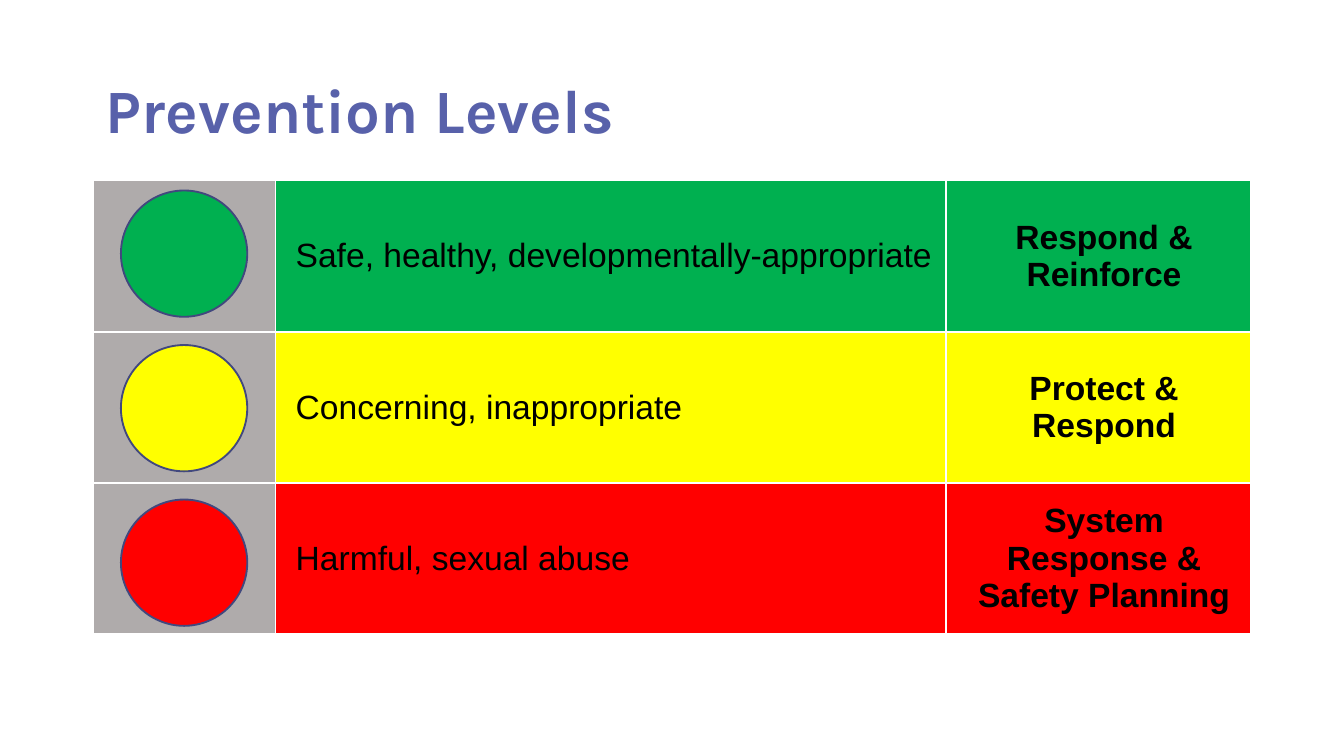
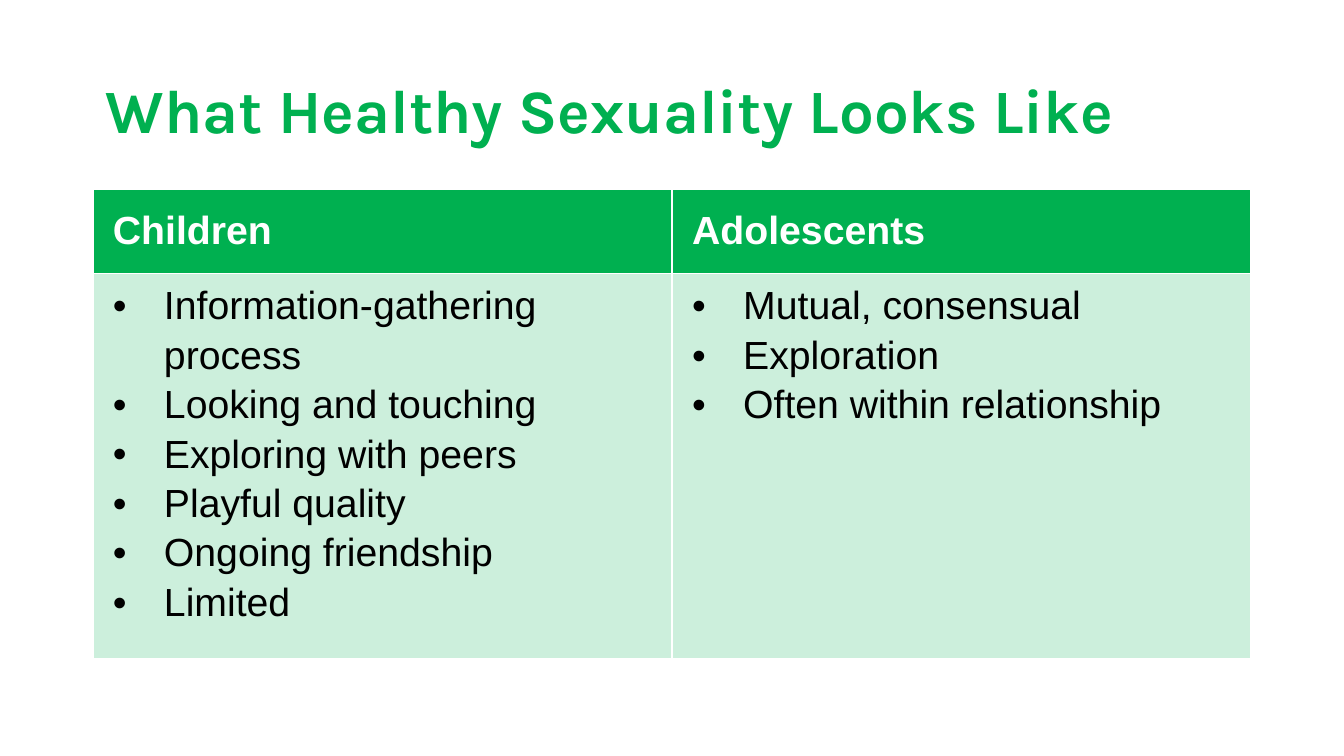
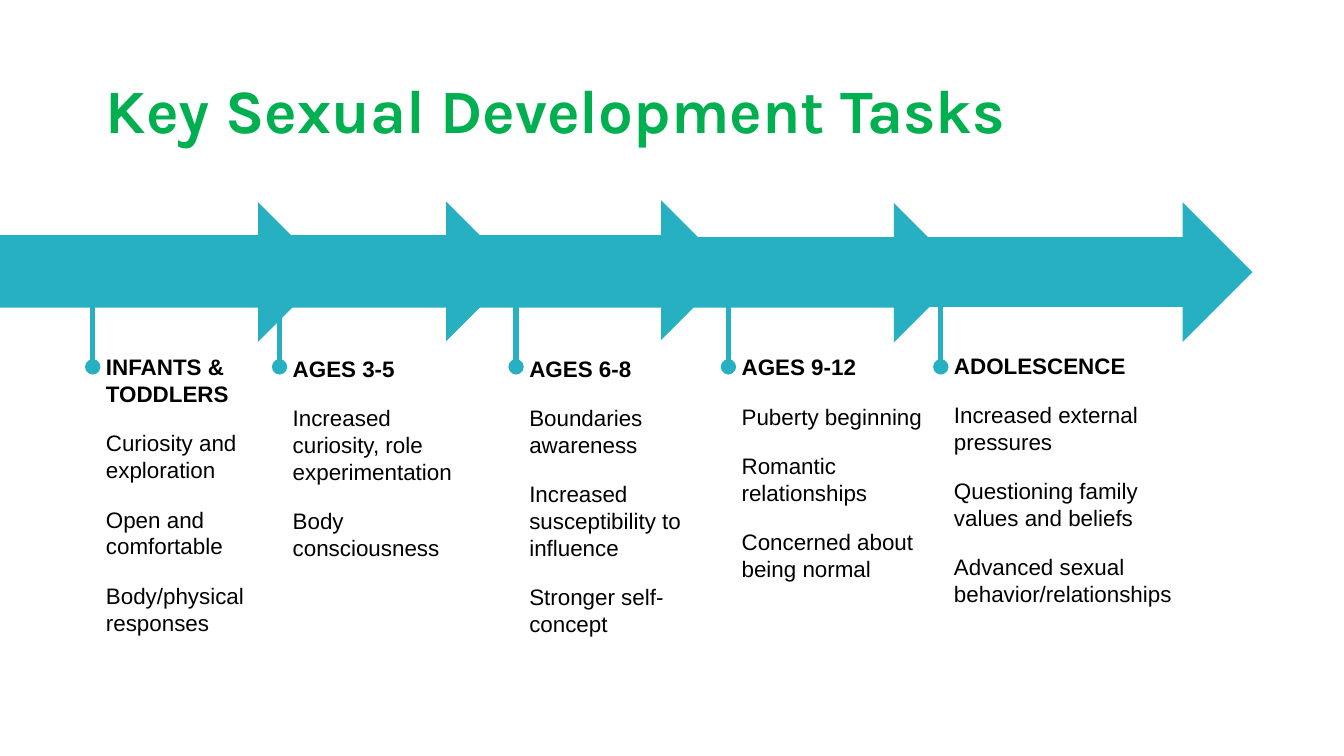
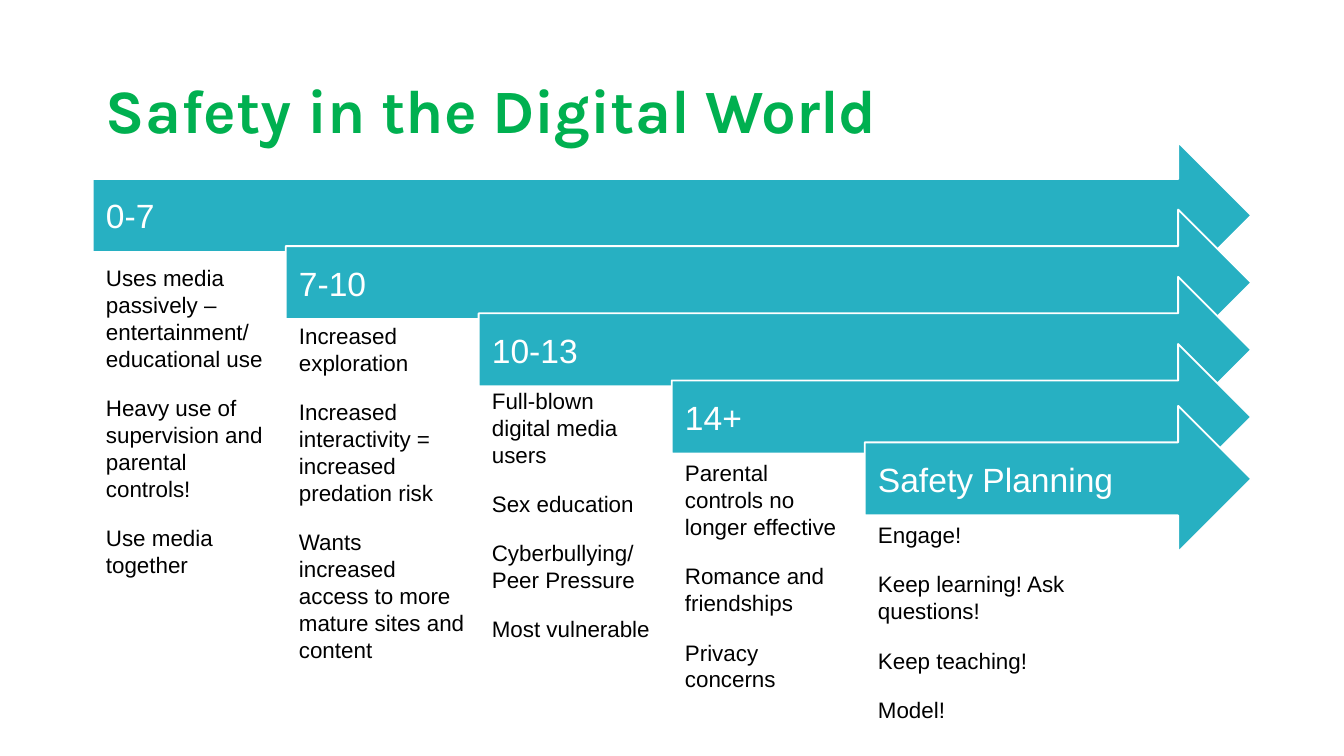
from copy import deepcopy
from dataclasses import dataclass
from typing import Any

from lxml.etree import SubElement
from pptx import Presentation
from pptx.dml.color import RGBColor
from pptx.enum.shapes import MSO_CONNECTOR as Connector, MSO_SHAPE as Preset
from pptx.enum.text import MSO_ANCHOR as Anchor, MSO_AUTO_SIZE as AutoSize, PP_ALIGN as Align
from pptx.oxml.ns import qn
from pptx.util import Inches, Pt

SLIDE_WIDTH, SLIDE_HEIGHT = Inches(10), Inches(5.625)
INDIGO, OUTLINE, TEAL = "5861AA", "41487E", "27B0C2"
GREEN, YELLOW, RED = "00B050", "FFFF00", "FF0000"
GREY, BLACK, WHITE = "AFABAB", "000000", "FFFFFF"
MARGIN, CONTENT_WIDTH, RIGHT_EDGE = 6.9, 86.2, 93.1


@dataclass(frozen=True)
class Box:
    """Place and size as percentages of the slide's width and height."""
    left: float
    top: float
    width: float
    height: float

    def emu(self) -> tuple[int, int, int, int]:
        """Return the box in slide units."""
        return across(self.left), down(self.top), across(self.width), down(self.height)


@dataclass(frozen=True)
class Style:
    """Look of the paragraphs in one text."""
    size: float
    color: str = BLACK
    bold: bool = False
    name: str = "Arial"
    align: Any = Align.LEFT
    spacing: float = 1.0
    after: float = 0
    bullet: bool = False


@dataclass(frozen=True)
class Level:
    """One prevention level."""
    color: str
    behavior: str
    response: str


@dataclass(frozen=True)
class Stage:
    """One age stage with its details and the arrow that ends it."""
    area: Box
    arrow: Box
    heading: str
    details: tuple[str, ...]


DETAIL = Style(12, after=12)
STAGE_HEADING = Style(12, bold=True, after=12)
LEVEL_TEXT = Style(18)
RESPONSE_TEXT = Style(18, bold=True, align=Align.CENTER)
AGE_TEXT = Style(18, WHITE)
GROUP_HEADING = Style(21, WHITE, bold=True)
GROUP_BULLET = Style(21, spacing=1.13, bullet=True)

LEVELS = (
    Level(GREEN, "Safe, healthy, developmentally-appropriate", "Respond & Reinforce"),
    Level(YELLOW, "Concerning, inappropriate", "Protect & Respond"),
    Level(RED, "Harmful, sexual abuse", "System Response & Safety Planning"),
)

HEALTHY_SIGNS = {
    "Children": ("Information-gathering process", "Looking and touching",
                 "Exploring with peers", "Playful quality", "Ongoing friendship", "Limited"),
    "Adolescents": ("Mutual, consensual", "Exploration", "Often within relationship"),
}

TASK_STAGES = (
    Stage(Box(6.9, 45.87, 16, 39.47), Box(-10.6, 26.75, 35, 18.49), "INFANTS & TODDLERS",
          ("Curiosity and exploration", "Open and comfortable", "Body/physical responses")),
    Stage(Box(20.8, 46.04, 14, 29.33), Box(-3.3, 26.67, 41.7, 18.49), "AGES 3-5",
          ("Increased curiosity, role experimentation", "Body consciousness")),
    Stage(Box(38.4, 46.04, 16, 39.47), Box(0, 26.49, 54.4, 18.49), "AGES 6-8",
          ("Boundaries awareness", "Increased susceptibility to influence",
           "Stronger self-concept")),
    Stage(Box(54.2, 45.87, 16, 32.36), Box(-0.5, 26.84, 72.2, 18.49), "AGES 9-12",
          ("Puberty beginning", "Romantic relationships", "Concerned about being normal")),
    Stage(Box(70, 45.69, 19.3, 35.91), Box(-0.5, 26.75, 93.7, 18.49), "ADOLESCENCE",
          ("Increased external pressures", "Questioning family values and beliefs",
           "Advanced sexual behavior/relationships")),
)


def digital_stage(step: int, arrow_top: float, area_top: float, area_height: float,
                  heading: str, details: tuple[str, ...], area_width: float = 14.3) -> Stage:
    """Place a digital safety stage on its step of the staircase."""
    left = MARGIN + 14.36 * step
    return Stage(Box(left, area_top, area_width, area_height),
                 Box(left, arrow_top, RIGHT_EDGE - left, 19.33), heading, details)


DIGITAL_STAGES = (
    digital_stage(0, 18.84, 34.13, 43.73, "0-7", (
        "Uses media passively – entertainment/\neducational use",
        "Heavy use of supervision and parental controls!", "Use media together")),
    digital_stage(1, 27.73, 41.78, 50.31, "7-10", (
        "Increased exploration", "Increased interactivity = increased predation risk",
        "Wants increased access to more mature sites and content")),
    digital_stage(2, 36.62, 50.31, 35.91, "10-13", (
        "Full-blown digital media users", "Sex education",
        "Cyberbullying/\nPeer Pressure", "Most vulnerable")),
    digital_stage(3, 45.51, 59.91, 32.89, "14+", (
        "Parental controls no longer effective", "Romance and friendships",
        "Privacy concerns")),
    digital_stage(4, 53.69, 68.09, 35.38, "Safety Planning", (
        "Engage!", "Keep learning! Ask questions!", "Keep teaching!", "Model!"), 18.2),
)


def across(share: float) -> int:
    """Turn a percentage of the slide's width into slide units."""
    return round(SLIDE_WIDTH * share / 100)


def down(share: float) -> int:
    """Turn a percentage of the slide's height into slide units."""
    return round(SLIDE_HEIGHT * share / 100)


def rgb(value: str) -> RGBColor:
    """Turn a hex string into a colour."""
    return RGBColor.from_string(value)


def assign(target: Any, values: dict[str, Any]) -> None:
    """Set attributes from a dict of format values."""
    for name, value in values.items():
        setattr(target, name, value)


def paint(target: Any, color: str, opacity: int = 100) -> None:
    """Fill a shape or cell with a solid colour."""
    target.fill.solid()
    target.fill.fore_color.rgb = rgb(color)
    if opacity < 100:
        tint = target.fill._xPr.find(f".//{qn('a:solidFill')}[last()]/{qn('a:srgbClr')}") \
            if target.fill._xPr.find(qn("a:solidFill")) is None \
            else target.fill._xPr.find(qn("a:solidFill")).find(qn("a:srgbClr"))
        SubElement(tint, qn("a:alpha"), val=str(opacity * 1000))


def write(frame: Any, lines: list[tuple[str, Style]]) -> None:
    """Write styled paragraphs into a text frame."""
    for index, (words, style) in enumerate(lines):
        paragraph = frame.add_paragraph() if index else frame.paragraphs[0]
        paragraph.text = words
        assign(paragraph, {"alignment": style.align, "line_spacing": style.spacing,
                           "space_after": Pt(style.after)})
        if style.bullet:
            properties = paragraph._p.get_or_add_pPr()
            properties.set("marL", str(across(3.8)))
            properties.set("indent", str(-across(3.8)))
            SubElement(properties, qn("a:buFont"), typeface="Arial")
            SubElement(properties, qn("a:buChar"), char="•")
        for run in paragraph.runs:
            assign(run.font, {"size": Pt(style.size), "bold": style.bold, "name": style.name})
            run.font.color.rgb = rgb(style.color)
        for line_break in paragraph._p.findall(qn("a:br")):
            line_break.append(deepcopy(paragraph.runs[0]._r.rPr))


def add_text(slide: Any, box: Box, lines: list[tuple[str, Style]], **frame_format: Any) -> None:
    """Add a wrapped text box."""
    frame = slide.shapes.add_textbox(*box.emu()).text_frame
    assign(frame, {"word_wrap": True, **frame_format})
    write(frame, lines)


def add_details(slide: Any, box: Box, lines: list[tuple[str, Style]]) -> None:
    """Add stage details in a box that grows with its text."""
    add_text(slide, box, lines, auto_size=AutoSize.SHAPE_TO_FIT_TEXT)


def add_preset(slide: Any, preset: Any, box: Box, color: str, outline: str = "") -> Any:
    """Add a filled preset shape, outlined when a line colour is given."""
    shape = slide.shapes.add_shape(preset, *box.emu())
    shape.shadow.inherit = False
    paint(shape, color)
    if outline:
        shape.line.color.rgb = rgb(outline)
        shape.line.width = Pt(1)
    else:
        shape.line.fill.background()
    return shape


def add_marker(slide: Any, left: float) -> None:
    """Add a timeline marker that ends in a dot."""
    marker = slide.shapes.add_connector(
        Connector.STRAIGHT, across(left), down(34.31), across(left), down(48.53))
    marker.line.color.rgb = rgb(TEAL)
    marker.line.width = Pt(2.75)
    SubElement(marker.line._get_or_add_ln(), qn("a:tailEnd"), type="oval")
    SubElement(marker._element.spPr, qn("a:effectLst"))


def add_grid(slide: Any, top: float, widths: list[float], heights: list[float]) -> Any:
    """Add a plain table with the given column and row shares."""
    box = Box(MARGIN, top, sum(widths), sum(heights))
    table = slide.shapes.add_table(len(heights), len(widths), *box.emu()).table
    assign(table, {"first_row": False, "horz_banding": False})
    for column, width in zip(table.columns, widths):
        column.width = across(width)
    for row, height in zip(table.rows, heights):
        row.height = down(height)
    return table


def fill_cell(cell: Any, color: str, lines: list[tuple[str, Style]],
              anchor: Any = Anchor.MIDDLE, opacity: int = 100) -> None:
    """Give a cell white borders, a fill and its text."""
    assign(cell, {"margin_left": across(1.5), "margin_right": across(0.7),
                  "margin_top": across(0.4), "margin_bottom": across(0.4),
                  "vertical_anchor": anchor})
    properties = cell._tc.get_or_add_tcPr()
    for side in ("a:lnL", "a:lnR", "a:lnT", "a:lnB"):
        border = SubElement(properties, qn(side), w=str(Pt(1)))
        SubElement(SubElement(border, qn("a:solidFill")), qn("a:srgbClr"), val=WHITE)
    paint(cell, color, opacity)
    write(cell.text_frame, lines)


def add_slide(deck: Any, title: str, color: str = GREEN) -> Any:
    """Add a white slide with its title."""
    slide = deck.slides.add_slide(deck.slide_layouts[6])
    paint(slide.background, WHITE)
    add_text(slide, Box(MARGIN, 5.33, CONTENT_WIDTH, 19.33),
             [(title, Style(33, color, bold=True, name="Karla", spacing=0.9))],
             vertical_anchor=Anchor.MIDDLE)
    return slide


def build_levels(deck: Any) -> None:
    """Build the prevention levels slide."""
    slide = add_slide(deck, "Prevention Levels", INDIGO)
    table = add_grid(slide, 23.9, [13.6, 49.9, 22.7], [20] * len(LEVELS))
    for row, level in enumerate(LEVELS):
        fill_cell(table.cell(row, 0), GREY, [])
        fill_cell(table.cell(row, 1), level.color, [(level.behavior, LEVEL_TEXT)])
        fill_cell(table.cell(row, 2), level.color, [(level.response, RESPONSE_TEXT)])
        add_preset(slide, Preset.OVAL, Box(9, 25.2 + 20.44 * row, 9.4, 16.71),
                   level.color, OUTLINE)


def build_healthy_signs(deck: Any) -> None:
    """Build the healthy sexuality slide."""
    slide = add_slide(deck, "What Healthy Sexuality Looks Like")
    table = add_grid(slide, 24.98, [CONTENT_WIDTH / 2] * 2, [11.2, 51])
    for column, (group, signs) in enumerate(HEALTHY_SIGNS.items()):
        fill_cell(table.cell(0, column), GREEN, [(group, GROUP_HEADING)])
        fill_cell(table.cell(1, column), GREEN, [(sign, GROUP_BULLET) for sign in signs],
                  Anchor.TOP, 20)


def build_tasks(deck: Any) -> None:
    """Build the development timeline slide."""
    slide = add_slide(deck, "Key Sexual Development Tasks")
    for stage in TASK_STAGES:
        add_details(slide, stage.area, [(stage.heading, STAGE_HEADING),
                                        *((detail, DETAIL) for detail in stage.details)])
    for stage in TASK_STAGES:
        add_marker(slide, stage.area.left)
    for stage in TASK_STAGES:
        add_preset(slide, Preset.RIGHT_ARROW, stage.arrow, TEAL)


def build_digital_safety(deck: Any) -> None:
    """Build the digital safety staircase slide."""
    slide = add_slide(deck, "Safety in the Digital World")
    for stage in DIGITAL_STAGES:
        arrow = add_preset(slide, Preset.RIGHT_ARROW, stage.arrow, TEAL, WHITE)
        arrow.text_frame.vertical_anchor = Anchor.MIDDLE
        write(arrow.text_frame, [(stage.heading, AGE_TEXT)])
        add_details(slide, stage.area, [(detail, DETAIL) for detail in stage.details])


def main() -> None:
    """Build and save the deck."""
    deck = Presentation()
    assign(deck, {"slide_width": SLIDE_WIDTH, "slide_height": SLIDE_HEIGHT})
    for build in (build_levels, build_healthy_signs, build_tasks, build_digital_safety):
        build(deck)
    deck.save("out.pptx")


if __name__ == "__main__":
    main()
